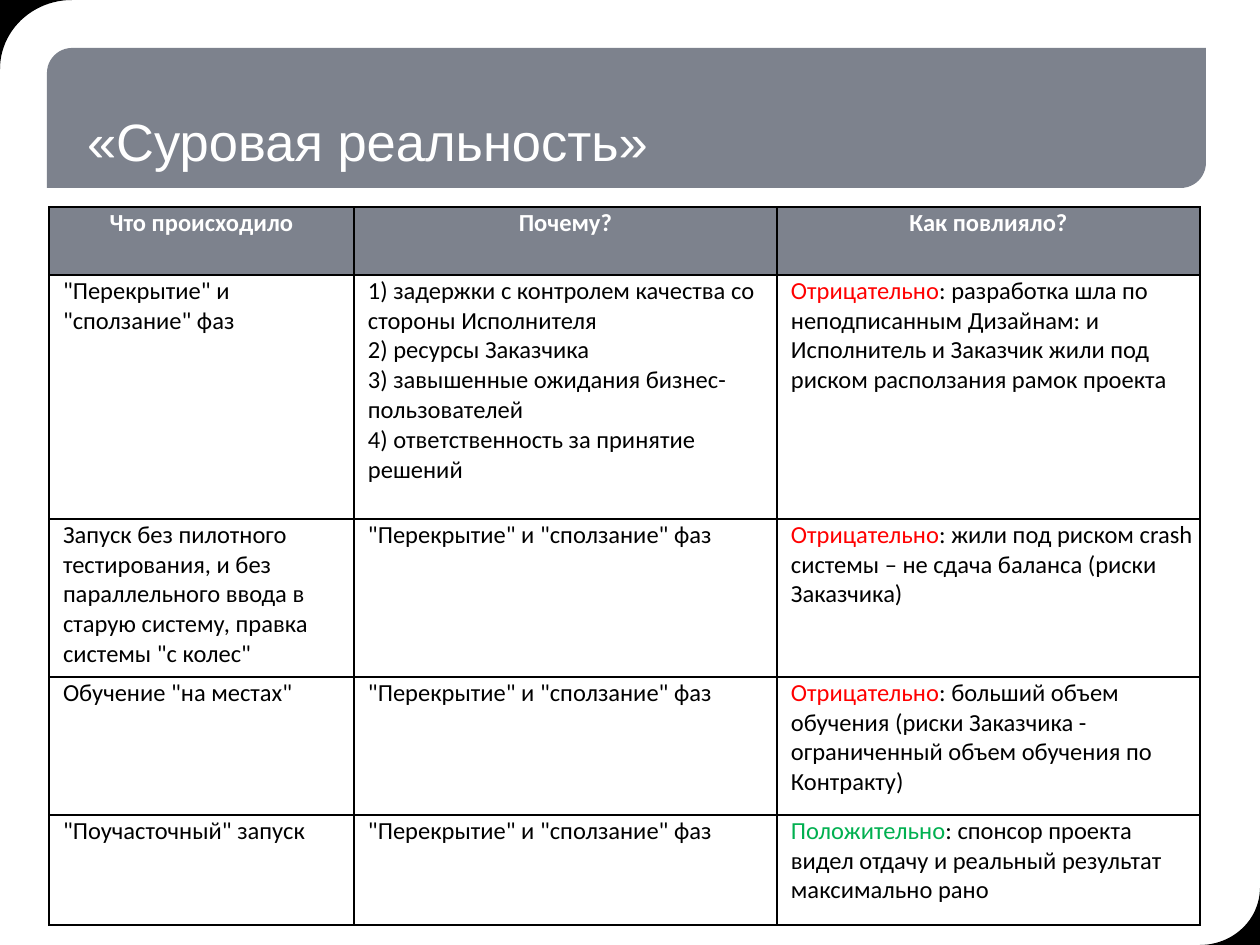
"""Build a slide with a title banner and a table of project problems, causes and effects."""
import math

from lxml import etree
from pptx import Presentation
from pptx.dml.color import RGBColor
from pptx.enum.shapes import MSO_SHAPE
from pptx.enum.text import MSO_ANCHOR, MSO_AUTO_SIZE, PP_ALIGN
from pptx.oxml.ns import qn
from pptx.util import Emu, Pt

BANNER_SHAPE = MSO_SHAPE.ROUND_2_DIAG_RECTANGLE
BOTTOM = MSO_ANCHOR.BOTTOM
GROW = MSO_AUTO_SIZE.SHAPE_TO_FIT_TEXT
LEFT, CENTER = PP_ALIGN.LEFT, PP_ALIGN.CENTER

WIDTH, HEIGHT = 1260, 945
PX = 914400 // 126
GRAY, BLACK, WHITE, RED, GREEN = "7D828D", "000000", "FFFFFF", "FF0000", "00B050"

TITLE = "«Суровая реальность»"
HEADERS = ["Что происходило", "Почему?", "Как повлияло?"]
OVERLAP = '"Перекрытие" и "сползание" фаз'
CAUSES = "\n".join([
    "1) задержки с контролем качества со стороны Исполнителя",
    "2) ресурсы Заказчика",
    "3) завышенные ожидания бизнес-пользователей",
    "4) ответственность за принятие решений",
])
NEGATIVE, POSITIVE = ("Отрицательно", RED), ("Положительно", GREEN)
ROWS = [
    (OVERLAP, CAUSES, NEGATIVE,
     ": разработка шла по неподписанным Дизайнам: и Исполнитель и Заказчик жили под риском "
     "расползания рамок проекта"),
    ('Запуск без пилотного тестирования, и без параллельного ввода в старую систему, '
     'правка системы "с колес"', OVERLAP, NEGATIVE,
     ": жили под риском crash системы – не сдача баланса (риски Заказчика)"),
    ('Обучение "на местах"', OVERLAP, NEGATIVE,
     ": больший объем обучения (риски Заказчика - ограниченный объем обучения по Контракту)"),
    ('"Поучасточный" запуск', OVERLAP, POSITIVE,
     ": спонсор проекта видел отдачу и реальный результат максимально рано"),
]
COLUMN_WIDTHS = [305, 423, 423]
ROW_HEIGHTS = [68, 244, 158, 138, 110]
TABLE_LEFT, TABLE_TOP = 49, 207


def px(value):
    return Emu(value * PX)


def color(value):
    return RGBColor.from_string(value)


def box(*lengths):
    return [px(length) for length in lengths]


def paint(shape, fill):
    shape.shadow.inherit = False
    shape.fill.solid()
    shape.fill.fore_color.rgb = color(fill)
    shape.line.fill.background()


def format_run(run, font, size, text_color, bold=False):
    run.font.name = font
    run.font.size = Pt(size)
    run.font.bold = bold
    run.font.color.rgb = color(text_color)


def add_banner(slide):
    banner = slide.shapes.add_shape(BANNER_SHAPE, *box(47, 48, 1159, 140))
    banner.adjustments[0] = 0.18
    banner.adjustments[1] = 0
    paint(banner, GRAY)


def add_corner(slide, x, y, width, height):
    """Fill the area between a slide corner and an arc; signed sizes point inwards."""
    angles = [math.pi / 2 * step / 24 for step in range(25)]
    arc = [(round((x + width * (1 - math.cos(a))) * PX),
            round((y + height * (1 - math.sin(a))) * PX)) for a in angles]
    builder = slide.shapes.build_freeform(x * PX, y * PX)
    builder.add_line_segments(arc)
    paint(builder.convert_to_shape(), BLACK)


def place_title(slide):
    title = slide.shapes.title
    slide.shapes._spTree.append(title._element)
    title.left, title.top, title.width, title.height = box(87, 122, 1068, 50)
    frame = title.text_frame
    frame.text = TITLE
    frame.word_wrap = True
    frame.auto_size = GROW
    frame.vertical_anchor = BOTTOM
    frame.margin_left = frame.margin_top = frame.margin_right = frame.margin_bottom = 0
    paragraph = frame.paragraphs[0]
    paragraph.alignment = LEFT
    paragraph.line_spacing = 0.8
    format_run(paragraph.runs[0], "Arial", 30, WHITE)


def add_borders(cell):
    properties = cell._tc.get_or_add_tcPr()
    for side in ("a:lnL", "a:lnR", "a:lnT", "a:lnB"):
        line = etree.SubElement(properties, qn(side), w=str(Pt(1)))
        fill = etree.SubElement(line, qn("a:solidFill"))
        etree.SubElement(fill, qn("a:srgbClr"), val=BLACK)


def fill_cell(cell, parts, header):
    add_borders(cell)
    cell.margin_left = px(1 if header else 14)
    cell.margin_right = cell.margin_top = px(1)
    cell.margin_bottom = 0
    paragraph = cell.text_frame.paragraphs[0]
    paragraph.alignment = CENTER if header else LEFT
    if header:
        cell.fill.solid()
        cell.fill.fore_color.rgb = color(GRAY)
    else:
        cell.fill.background()
    if len(parts) == 1:
        paragraph.text = parts[0][0]
    else:
        for text, _ in parts:
            paragraph.add_run().text = text
    colors = [part[1] for part in parts] if len(parts) > 1 else [parts[0][1]] * len(paragraph.runs)
    for run, text_color in zip(paragraph.runs, colors):
        format_run(run, "Calibri", 14, text_color, header)


def add_problem_table(slide):
    content = [[[(text, WHITE)] for text in HEADERS]]
    content += [[[(problem, BLACK)], [(cause, BLACK)], [verdict, (effect, BLACK)]]
                for problem, cause, verdict, effect in ROWS]
    table = slide.shapes.add_table(
        len(content), len(HEADERS),
        *box(TABLE_LEFT, TABLE_TOP, sum(COLUMN_WIDTHS), sum(ROW_HEIGHTS))).table
    table.first_row = table.horz_banding = False
    for column, width in zip(table.columns, COLUMN_WIDTHS):
        column.width = px(width)
    for index, (row, height) in enumerate(zip(table.rows, ROW_HEIGHTS)):
        row.height = px(height)
        for cell, parts in zip(row.cells, content[index]):
            fill_cell(cell, parts, index == 0)


def main():
    presentation = Presentation()
    presentation.slide_width, presentation.slide_height = box(WIDTH, HEIGHT)
    slide = presentation.slides.add_slide(presentation.slide_layouts[5])
    add_banner(slide)
    add_corner(slide, 0, 0, 72, 69)
    add_corner(slide, WIDTH, HEIGHT, -60, -57)
    place_title(slide)
    add_problem_table(slide)
    presentation.save("out.pptx")


if __name__ == "__main__":
    main()
